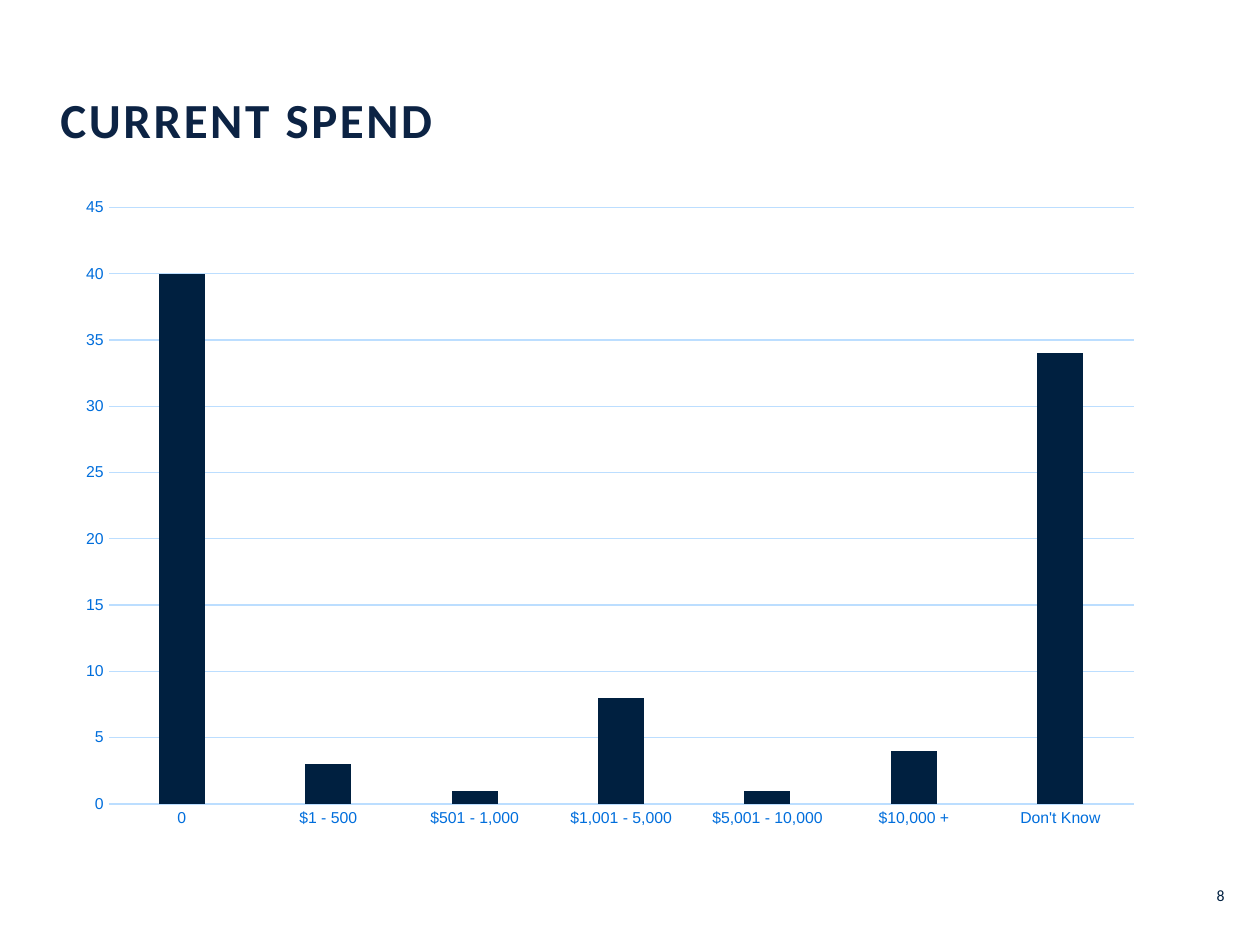
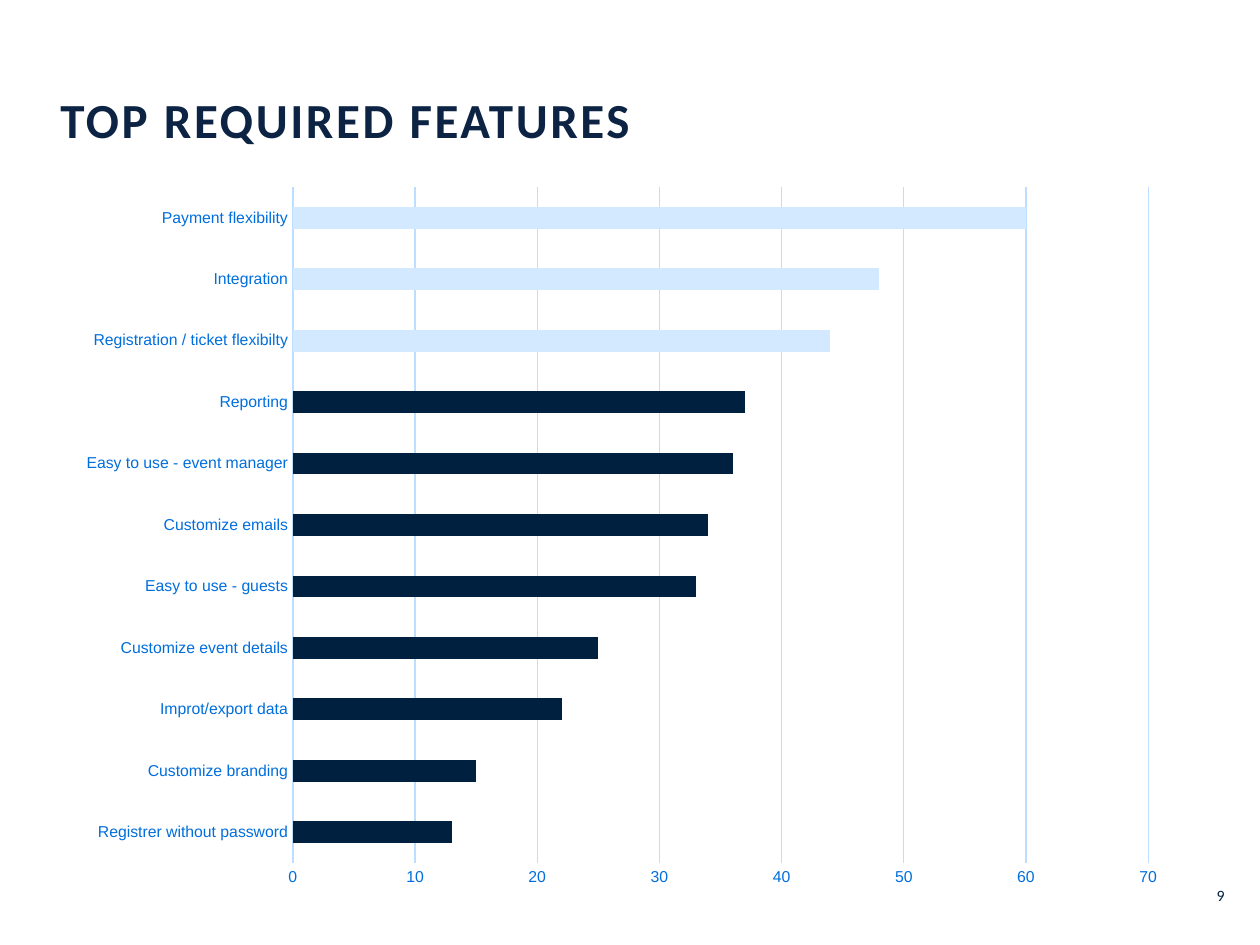
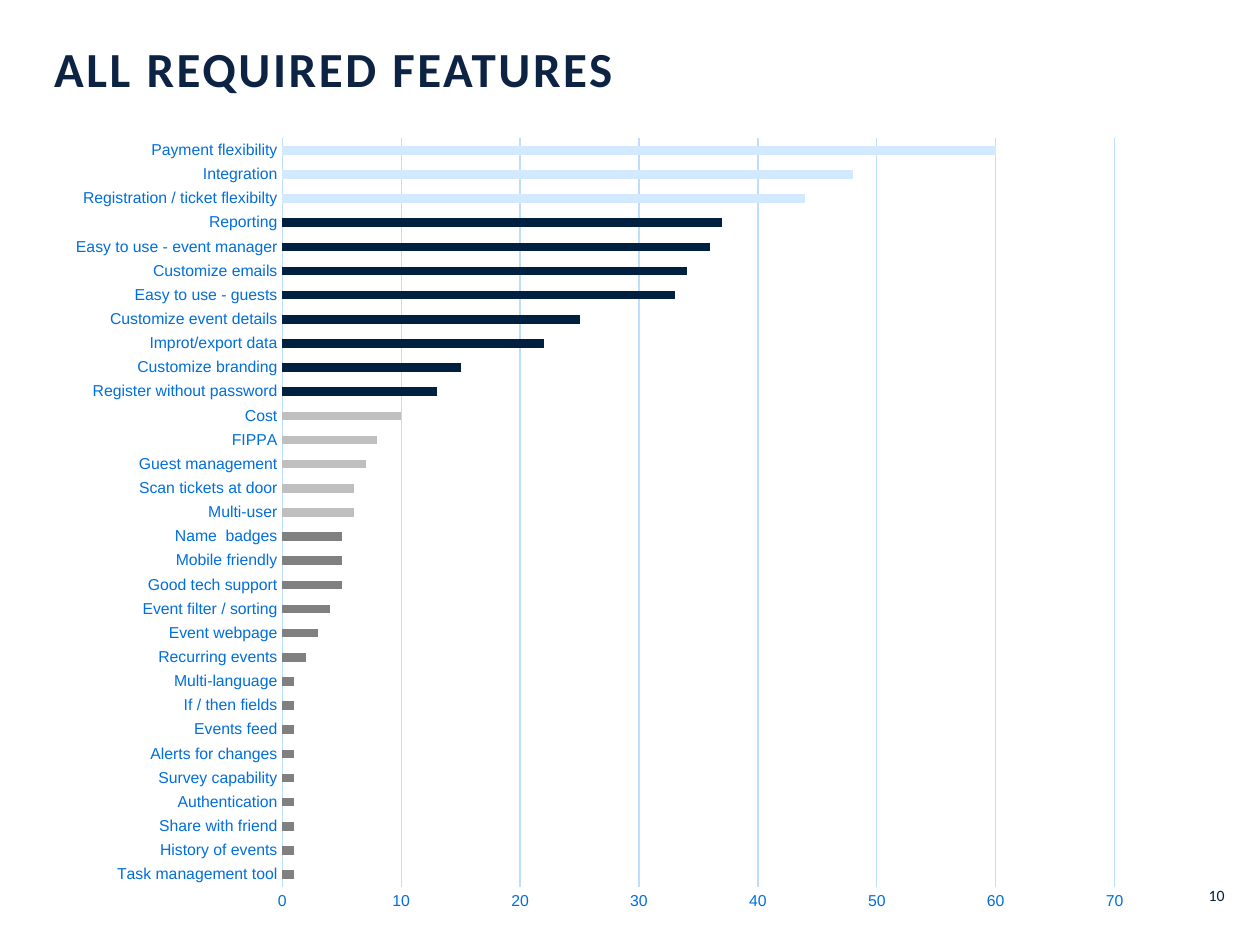
import pptx
import pptx.chart.data
import pptx.dml.color
import pptx.enum.chart
import pptx.enum.text
import pptx.util
from pptx.util import Inches, Pt

NAVY, TITLE_NAVY, BLUE = "002040", "0C2344", "006EDC"
GRID, LIGHT, SILVER, GRAY = "BCDEFF", "D2E9FF", "BFBFBF", "808080"
COLUMN = pptx.enum.chart.XL_CHART_TYPE.COLUMN_CLUSTERED
BAR = pptx.enum.chart.XL_CHART_TYPE.BAR_CLUSTERED


def rgb(value):
    return pptx.dml.color.RGBColor.from_string(value)


def write(shape, text, size, color, bold=False):
    """Put one run in a margin-free frame and return its paragraph and run."""
    tf = shape.text_frame
    tf.margin_left = tf.margin_right = tf.margin_top = tf.margin_bottom = 0
    tf.word_wrap = True
    tf.auto_size = pptx.enum.text.MSO_AUTO_SIZE.NONE
    p = tf.paragraphs[0]
    r = p.add_run()
    r.text = text
    r.font.name = "Calibri"
    r.font.size = Pt(size)
    r.font.bold = bold
    r.font.color.rgb = rgb(color)
    return p, r


spend = [("0", 40), ("$1 - 500", 3), ("$501 - 1,000", 1), ("$1,001 - 5,000", 8),
         ("$5,001 - 10,000", 1), ("$10,000 +", 4), ("Don't Know", 34)]

# Features run from the bottom bar to the top bar
top_features = [
    ("Customize branding", 15), ("Improt/export data", 22),
    ("Customize event details", 25), ("Easy to use - guests", 33),
    ("Customize emails", 34), ("Easy to use - event manager", 36),
    ("Reporting", 37), ("Registration / ticket flexibilty", 44),
    ("Integration", 48), ("Payment flexibility", 60)]
other_features = [
    ("Task management tool", 1), ("History of events", 1),
    ("Share with friend", 1), ("Authentication", 1),
    ("Survey capability", 1), ("Alerts for changes", 1), ("Events feed", 1),
    ("If / then fields", 1), ("Multi-language", 1), ("Recurring events", 2),
    ("Event webpage", 3), ("Event filter / sorting", 4),
    ("Good tech support", 5), ("Mobile friendly", 5), ("Name  badges", 5),
    ("Multi-user", 6), ("Scan tickets at door", 6), ("Guest management", 7),
    ("FIPPA", 8), ("Cost", 10), ("Register without password", 13)]

# Title, title position, chart type, chart box, axis maximum and step, data
slides = [
    ("CURRENT SPEND", (0.48, 0.69), COLUMN, (0.51, 1.47, 8.66, 5.2), 45, 5, spend),
    ("TOP REQUIRED FEATURES", (0.48, 0.69), BAR, (0.51, 1.37, 8.85, 5.78), 70, 10,
     [("Registrer without password", 13)] + top_features),
    ("ALL REQUIRED FEATURES", (0.43, 0.29), BAR, (0.43, 0.97, 8.66, 6.38), 70, 10,
     other_features + top_features),
]

prs = pptx.Presentation()
prs.slide_width, prs.slide_height = Inches(10), Inches(7.5)

for number, (title, (left, top), kind, box, maximum, step, data) in enumerate(slides, 8):
    s = prs.slides.add_slide(prs.slide_layouts[5])

    sp = s.shapes.title
    sp.left, sp.top = Inches(left), Inches(top)
    sp.width, sp.height = Inches(8.61), Inches(0.68)
    p, r = write(sp, title, 28, TITLE_NAVY, bold=True)
    sp.text_frame.vertical_anchor = pptx.enum.text.MSO_ANCHOR.MIDDLE
    p.alignment = pptx.enum.text.PP_ALIGN.LEFT
    p.line_spacing = Pt(21)
    r.font._element.set("spc", "150")

    sp = s.shapes.add_textbox(Inches(9.39), Inches(7.03), Inches(0.33), Inches(0.21))
    p, r = write(sp, str(number), 9, NAVY)
    p.alignment = pptx.enum.text.PP_ALIGN.RIGHT

    chart_data = pptx.chart.data.CategoryChartData()
    chart_data.categories = [name for name, value in data]
    chart_data.add_series("Series 1", [value for name, value in data])
    chart = s.shapes.add_chart(kind, *map(Inches, box), chart_data).chart
    chart.has_title = chart.has_legend = False
    chart.font.name = "Arial"
    chart.font.size = Pt(10)
    chart.font.color.rgb = rgb(NAVY)

    plot = chart.plots[0]
    plot.vary_by_categories = False
    plot.gap_width = 219 if kind == COLUMN else 182
    plot.overlap = -27 if kind == COLUMN else 0
    series = plot.series[0]
    series.invert_if_negative = False
    series.format.fill.solid()
    series.format.fill.fore_color.rgb = rgb(NAVY)

    if kind == BAR:
        for i, (name, value) in enumerate(data):
            color = (LIGHT if value > 40 else NAVY if value > 10
                     else SILVER if value > 5 else GRAY)
            if color != NAVY:
                fill = series.points[i].format.fill
                fill.solid()
                fill.fore_color.rgb = rgb(color)

    for axis in (chart.category_axis, chart.value_axis):
        axis.major_tick_mark = axis.minor_tick_mark = pptx.enum.chart.XL_TICK_MARK.NONE
        font = axis.tick_labels.font
        font.name = "Arial"
        font.size = Pt(9)
        font.color.rgb = rgb(BLUE)
    chart.value_axis.minimum_scale = 0
    chart.value_axis.maximum_scale = maximum
    chart.value_axis.major_unit = step
    chart.value_axis.format.line.fill.background()
    chart.value_axis.has_major_gridlines = True
    for line in (chart.category_axis.format.line,
                 chart.value_axis.major_gridlines.format.line):
        line.color.rgb = rgb(GRID)
        line.width = Pt(0.75)

prs.save("out.pptx")
